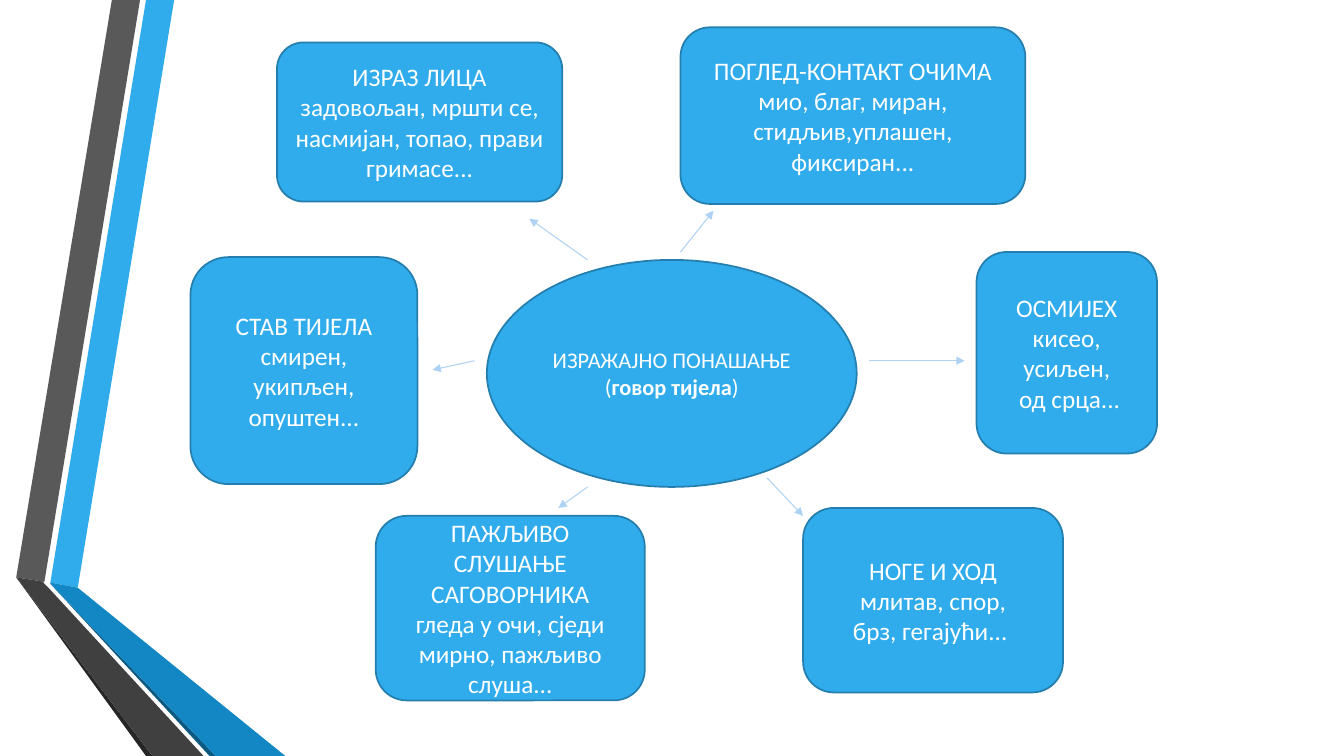
import dataclasses

import lxml.etree
import pptx
import pptx.dml.color
import pptx.enum.shapes
import pptx.enum.text
import pptx.oxml.ns
import pptx.util

Cm = pptx.util.Cm
SHAPES = pptx.enum.shapes.MSO_SHAPE


@dataclasses.dataclass(frozen=True)
class Theme:
    font: str = "Calibri"
    center_size: int = 16
    topic_size: int = 18
    outline_width: float = 1.25
    arrow_width: float = 0.75
    text: str = "FFFFFF"
    fill: str = "30ACEC"
    outline: str = "247FAF"
    arrow: str = "AED2F4"
    blue_dark: str = "1287C3"
    blue_shadow: str = "0C5A82"
    gray: str = "595959"
    gray_dark: str = "404040"
    gray_shadow: str = "262626"


def rgb(value):
    return pptx.dml.color.RGBColor.from_string(value)


def add_run(p, text, *, font, size, color, bold=False):
    r = p.add_run()
    r.text = text
    r.font.name = font
    r.font.size = pptx.util.Pt(size)
    r.font.color.rgb = rgb(color)
    r.font.bold = bold


class Deck:
    def __init__(self, prs, theme):
        self.theme = theme
        self.slide = prs.slides.add_slide(prs.slide_layouts[6])

    def band(self, color, points):
        """Filled polygon without an outline."""
        points = [(Cm(x), Cm(y)) for x, y in points]
        builder = self.slide.shapes.build_freeform(*points[0])
        builder.add_line_segments(points[1:], close=True)
        sp = builder.convert_to_shape()
        sp.shadow.inherit = False
        sp.fill.solid()
        sp.fill.fore_color.rgb = rgb(color)
        sp.line.fill.background()

    def bubble(self, kind, box, paragraphs, size):
        """Outlined shape; each paragraph is a list of (text, bold) runs."""
        t = self.theme
        sp = self.slide.shapes.add_shape(kind, *map(Cm, box))
        sp.shadow.inherit = False
        sp.fill.solid()
        sp.fill.fore_color.rgb = rgb(t.fill)
        sp.line.color.rgb = rgb(t.outline)
        sp.line.width = pptx.util.Pt(t.outline_width)
        tf = sp.text_frame
        tf.word_wrap = True
        tf.vertical_anchor = pptx.enum.text.MSO_ANCHOR.MIDDLE
        for i, runs in enumerate(paragraphs):
            p = tf.add_paragraph() if i else tf.paragraphs[0]
            p.alignment = pptx.enum.text.PP_ALIGN.CENTER
            for text, bold in runs:
                add_run(p, text, font=t.font, size=size, color=t.text, bold=bold)

    def topic(self, box, *lines):
        self.bubble(SHAPES.ROUNDED_RECTANGLE, box,
                    [[(line, False)] for line in lines], self.theme.topic_size)

    def arrow(self, *ends):
        """Straight arrow given as x1, y1, x2, y2."""
        cxn = self.slide.shapes.add_connector(
            pptx.enum.shapes.MSO_CONNECTOR.STRAIGHT, *map(Cm, ends))
        cxn.line.color.rgb = rgb(self.theme.arrow)
        cxn.line.width = pptx.util.Pt(self.theme.arrow_width)
        qn = pptx.oxml.ns.qn
        ln = cxn.line._get_or_add_ln()
        lxml.etree.SubElement(ln, qn("a:tailEnd"), type="triangle")
        lxml.etree.SubElement(cxn._element.spPr, qn("a:effectLst"))


def main():
    prs = pptx.Presentation()
    prs.slide_width, prs.slide_height = Cm(33.87), Cm(19.05)
    theme = Theme()
    deck = Deck(prs, theme)

    # Folded ribbons on the left edge
    bottom = 19.05
    bands = [
        (theme.fill, [(1.27, 14.68), (1.96, 14.81), (4.39, 0), (3.68, 0)]),
        (theme.gray, [(3.53, 0), (2.82, 0), (0.41, 14.55), (1.12, 14.66)]),
        (theme.gray_shadow, [(0.41, 14.55), (3.68, bottom), (3.84, bottom)]),
        (theme.blue_shadow, [(1.27, 14.71), (5.28, bottom), (5.44, bottom)]),
        (theme.blue_dark, [(1.27, 14.68), (1.27, 14.71), (5.44, bottom),
                           (7.19, bottom), (1.96, 14.81)]),
        (theme.gray_dark, [(5.13, bottom), (1.22, 14.81), (1.09, 14.68),
                           (1.12, 14.66), (0.41, 14.55), (3.84, bottom)]),
    ]
    for color, points in bands:
        deck.band(color, points)

    # Central idea
    deck.bubble(SHAPES.OVAL, (12.27, 6.55, 9.32, 5.72), [
        [("ИЗРАЖАЈНО ПОНАШАЊЕ", False)],
        [("(", False), ("говор тијела", True), (")", False)],
    ], theme.center_size)

    # Topics around it
    topics = [
        ((6.98, 1.07, 7.19, 4.01), "ИЗРАЗ ЛИЦА",
         "задовољан, мршти се, насмијан, топао, прави гримасе..."),
        ((17.15, 0.69, 8.69, 4.45), "ПОГЛЕД-КОНТАКТ ОЧИМА",
         "мио, благ, миран, стидљив,уплашен, фиксиран..."),
        ((24.61, 6.35, 4.55, 5.08), "ОСМИЈЕХ", "кисео, усиљен,", " од срца..."),
        ((4.8, 6.48, 5.72, 5.72), "СТАВ ТИЈЕЛА", "смирен, укипљен, опуштен..."),
        ((9.47, 13, 6.78, 4.65), "ПАЖЉИВО СЛУШАЊЕ САГОВОРНИКА",
         "гледа у очи, сједи мирно, пажљиво слуша..."),
        ((20.24, 12.8, 6.55, 4.65), "НОГЕ И ХОД", "млитав, спор,",
         "брз, гегајући... "),
    ]
    for box, *lines in topics:
        deck.topic(box, *lines)

    # Arrows from the centre to the topics
    arrows = [
        (14.81, 6.55, 13.34, 5.51),
        (17.15, 6.35, 17.98, 5.31),
        (21.89, 9.09, 24.31, 9.09),
        (19.33, 12.04, 20.24, 13),
        (14.81, 12.27, 14.07, 12.8),
        (11.96, 9.09, 10.9, 9.32),
    ]
    for ends in arrows:
        deck.arrow(*ends)

    prs.save("out.pptx")


if __name__ == "__main__":
    main()
